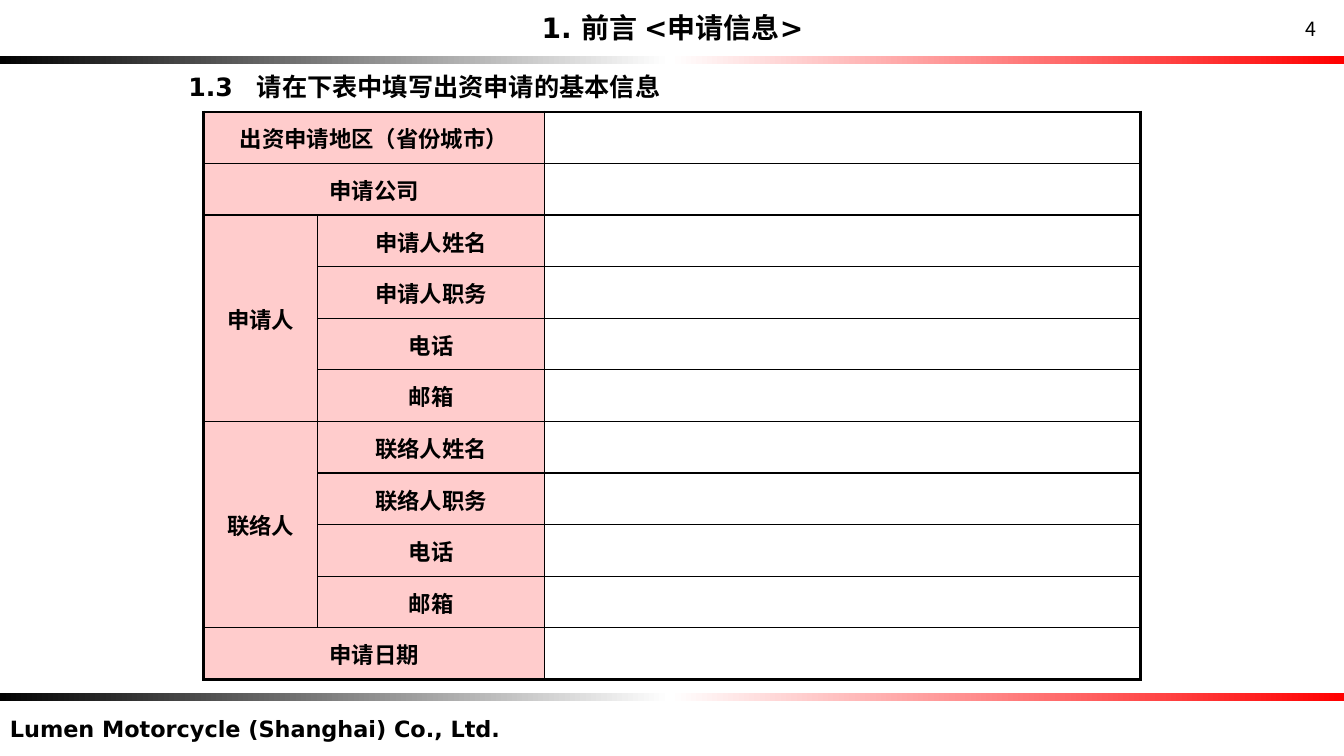
from copy import deepcopy
from dataclasses import dataclass

from lxml.etree import SubElement
from pptx import Presentation
from pptx.dml.color import RGBColor
from pptx.enum.shapes import MSO_SHAPE
from pptx.enum.text import MSO_ANCHOR, MSO_AUTO_SIZE, PP_ALIGN
from pptx.oxml.ns import qn
from pptx.util import Inches, Pt


@dataclass(frozen=True)
class Theme:
    """Colours, fonts and type sizes of the slide."""
    black: RGBColor = RGBColor(0, 0, 0)
    white: RGBColor = RGBColor(255, 255, 255)
    red: RGBColor = RGBColor(255, 0, 0)
    pink: RGBColor = RGBColor(255, 204, 204)
    font: str = "DejaVu Sans"
    number_font: str = "Noto Sans CJK JP"
    title_size: int = 20
    heading_size: int = 18
    body_size: int = 16
    number_size: int = 14
    outer_line: float = 2.25
    inner_line: float = 1


THEME = Theme()
FORM_ROWS = [
    ("出资申请地区（省份城市）", ""),
    ("申请公司", ""),
    ("申请人", "申请人姓名"),
    ("", "申请人职务"),
    ("", "电话"),
    ("", "邮箱"),
    ("联络人", "联络人姓名"),
    ("", "联络人职务"),
    ("", "电话"),
    ("", "邮箱"),
    ("申请日期", ""),
]
MERGES = [(0, 0, 0, 1), (1, 0, 1, 1), (2, 0, 5, 0), (6, 0, 9, 0), (10, 0, 10, 1)]
COLUMN_WIDTHS = (1.13, 2.25, 5.91)
ROW_HEIGHT = 0.512


def place(shape, left, top, width, height):
    """Move and size a shape in inches."""
    shape.left, shape.top = Inches(left), Inches(top)
    shape.width, shape.height = Inches(width), Inches(height)


def style_paragraph(paragraph, size, align=PP_ALIGN.LEFT, bold=True, font=THEME.font):
    """Set the alignment and font of a paragraph."""
    paragraph.alignment = align
    paragraph.font.name = font
    paragraph.font.size = Pt(size)
    paragraph.font.bold = bold
    paragraph.font.color.rgb = THEME.black


def add_gradient_bar(slide, top):
    """Add a full-width bar running from black through white to red."""
    bar = slide.shapes.add_shape(
        MSO_SHAPE.RECTANGLE, Inches(-0.05), Inches(top), Inches(13.39), Inches(0.08))
    bar.shadow.inherit = False
    bar.line.fill.background()
    bar.fill.gradient()
    bar.fill.gradient_angle = 0
    first_stop = bar._element.spPr.find(".//" + qn("a:gs"))
    first_stop.addnext(deepcopy(first_stop))
    colors = (THEME.black, THEME.white, THEME.red)
    for stop, color, position in zip(bar.fill.gradient_stops, colors, (0, 0.5, 1)):
        stop.color.rgb = color
        stop.position = position


def set_title(slide, text):
    """Fill and format the title placeholder."""
    title = slide.shapes.title
    place(title, 4.38, 0.11, 4.58, 0.33)
    frame = title.text_frame
    frame.text = text
    frame.auto_size = MSO_AUTO_SIZE.NONE
    frame.vertical_anchor = MSO_ANCHOR.MIDDLE
    frame.margin_top = frame.margin_bottom = 0
    style_paragraph(frame.paragraphs[0], THEME.title_size, PP_ALIGN.CENTER)


def add_text(slide, text, box, size, tab=None, **style):
    """Add a one-paragraph text box, with an optional tab stop in inches."""
    frame = slide.shapes.add_textbox(*map(Inches, box)).text_frame
    frame.word_wrap = True
    frame.text = text
    paragraph = frame.paragraphs[0]
    if tab:
        tabs = SubElement(paragraph._p.get_or_add_pPr(), qn("a:tabLst"))
        SubElement(tabs, qn("a:tab"), pos=str(Inches(tab)), algn="l")
    style_paragraph(paragraph, size, **style)


def set_borders(cell, outer_sides):
    """Draw the four cell borders, heavier on the outer sides."""
    properties = cell._tc.get_or_add_tcPr()
    for side in "LRTB":
        width = THEME.outer_line if side in outer_sides else THEME.inner_line
        line = SubElement(properties, qn(f"a:ln{side}"), w=str(Pt(width)))
        fill = SubElement(line, qn("a:solidFill"))
        SubElement(fill, qn("a:srgbClr"), val=str(THEME.black))


def format_label(cell, text):
    """Write a centred form label on pink."""
    cell.text = text
    cell.fill.solid()
    cell.fill.fore_color.rgb = THEME.pink
    cell.vertical_anchor = MSO_ANCHOR.MIDDLE
    cell.margin_left = cell.margin_right = cell.margin_top = Inches(0.01)
    cell.margin_bottom = 0
    style_paragraph(cell.text_frame.paragraphs[0], THEME.body_size, PP_ALIGN.CENTER)


def add_form(slide):
    """Add the application form table."""
    row_count, column_count = len(FORM_ROWS), len(COLUMN_WIDTHS)
    table = slide.shapes.add_table(
        row_count, column_count, Inches(2.02), Inches(1.11),
        Inches(sum(COLUMN_WIDTHS)), Inches(ROW_HEIGHT * row_count)).table
    table.first_row = table.horz_banding = False
    for column, width in zip(table.columns, COLUMN_WIDTHS):
        column.width = Inches(width)
    for row_index, labels in enumerate(FORM_ROWS):
        table.rows[row_index].height = Inches(ROW_HEIGHT)
        for column_index in range(column_count):
            cell = table.cell(row_index, column_index)
            edges = {"L": column_index == 0, "R": column_index == column_count - 1,
                     "T": row_index == 0, "B": row_index == row_count - 1}
            set_borders(cell, [side for side, outer in edges.items() if outer])
            if column_index < len(labels):
                format_label(cell, labels[column_index])
            else:
                cell.fill.background()
    for top, left, bottom, right in MERGES:
        table.cell(top, left).merge(table.cell(bottom, right))


def main():
    """Build and save the slide."""
    presentation = Presentation()
    presentation.slide_width, presentation.slide_height = Inches(13.33), Inches(7.5)
    slide = presentation.slides.add_slide(presentation.slide_layouts[5])
    for top in (0.56, 6.87):
        add_gradient_bar(slide, top)
    add_text(slide, "Lumen Motorcycle (Shanghai) Co., Ltd.", (0, 7.05, 7.39, 0.37),
             THEME.body_size)
    add_text(slide, "4", (12.67, 0.12, 0.66, 0.34), THEME.number_size,
             align=PP_ALIGN.CENTER, bold=False, font=THEME.number_font)
    set_title(slide, "1. 前言 <申请信息>")
    add_form(slide)
    add_text(slide, "1.3\t请在下表中填写出资申请的基本信息", (1.77, 0.66, 5.04, 0.4),
             THEME.heading_size, tab=0.68)
    presentation.save("out.pptx")


if __name__ == "__main__":
    main()
